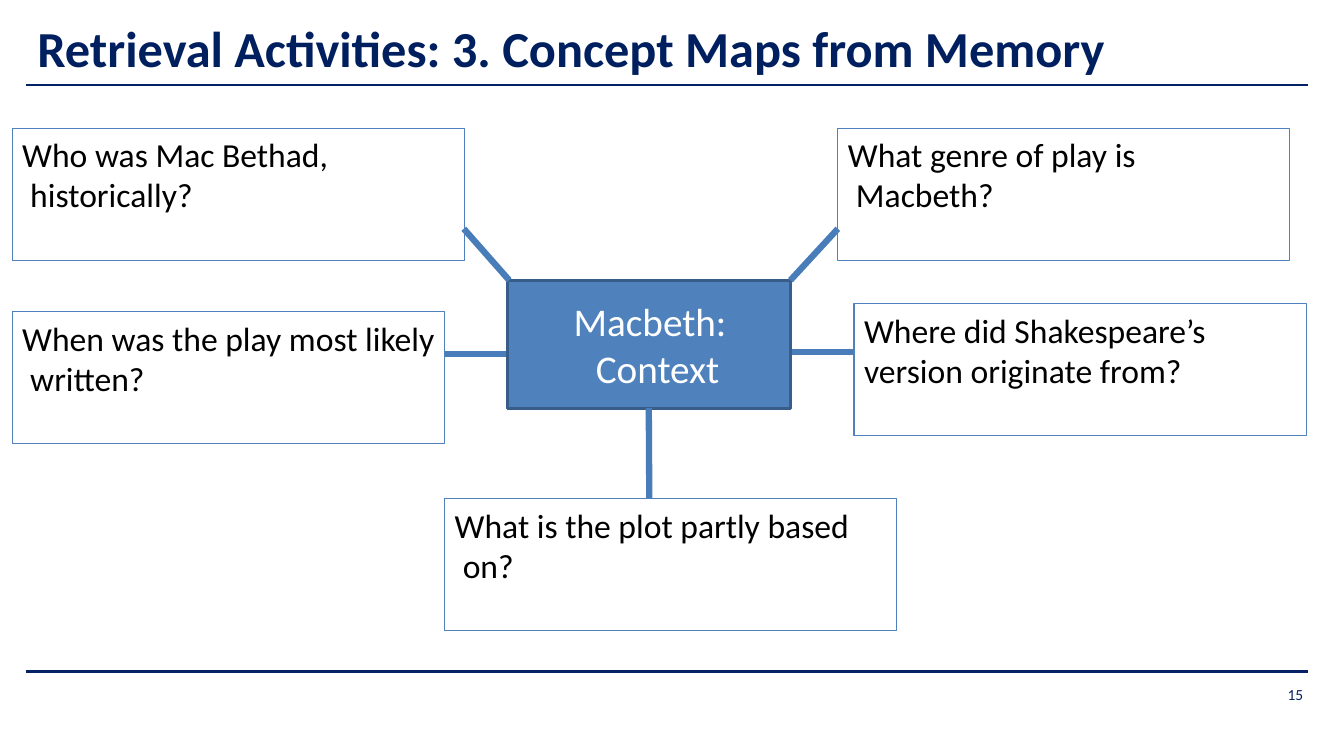
from pptx import Presentation
from pptx.dml.color import RGBColor
from pptx.enum.shapes import MSO_CONNECTOR, MSO_SHAPE
from pptx.enum.text import MSO_ANCHOR, MSO_AUTO_SIZE, PP_ALIGN
from pptx.oxml.ns import qn
from pptx.util import Inches, Pt
from lxml.etree import SubElement

COLOURS = {
    "title": "001F5F",
    "rule": "042163",
    "hub": "4F81BC",
    "hub_border": "385D89",
    "link": "497DBA",
    "text": "000000",
    "hub_text": "FFFFFF",
}


class ConceptMap:
    font_name = "Calibri"

    def __init__(self, presentation):
        self.slide = presentation.slides.add_slide(presentation.slide_layouts[5])

    def colour(self, name):
        return RGBColor.from_string(COLOURS[name])

    def add_text(self, shape, lines, size, colour, top=0, margin=0, hanging=0,
                 bold=False, anchor=MSO_ANCHOR.TOP):
        frame = shape.text_frame
        frame.word_wrap = True
        frame.auto_size = MSO_AUTO_SIZE.NONE
        frame.vertical_anchor = anchor
        frame.margin_left = frame.margin_right = frame.margin_bottom = 0
        frame.margin_top = Inches(top)
        paragraph = frame.paragraphs[0]
        paragraph.alignment = PP_ALIGN.LEFT
        properties = paragraph._p.get_or_add_pPr()
        properties.set("marL", str(Inches(margin + hanging)))
        properties.set("indent", str(-Inches(hanging)))
        for index, line in enumerate(lines):
            if index:
                paragraph.add_line_break()
            run = paragraph.add_run()
            run.text = line
            run.font.name = self.font_name
            run.font.size = Pt(size)
            run.font.bold = bold
            run.font.color.rgb = self.colour(colour)

    def title(self, text):
        shape = self.slide.shapes.title
        shape.left, shape.top = Inches(0.36), Inches(0.14)
        shape.width, shape.height = Inches(12), Inches(0.63)
        self.add_text(shape, [text], 36, "title", top=0.03, margin=0.01, bold=True)

    def line(self, start, end, colour, width):
        points = [Inches(value) for value in (*start, *end)]
        connector = self.slide.shapes.add_connector(MSO_CONNECTOR.STRAIGHT, *points)
        connector.line.color.rgb = self.colour(colour)
        connector.line.width = Pt(width)
        SubElement(connector._element.spPr, qn("a:effectLst"))
        return connector

    def rectangle(self, left, top, width, height, border, border_width, fill=None):
        shape = self.slide.shapes.add_shape(
            MSO_SHAPE.RECTANGLE, Inches(left), Inches(top), Inches(width), Inches(height))
        shape.shadow.inherit = False
        if fill:
            shape.fill.solid()
            shape.fill.fore_color.rgb = self.colour(fill)
        else:
            shape.fill.background()
        shape.line.color.rgb = self.colour(border)
        shape.line.width = Pt(border_width)
        return shape

    def hub(self, lines):
        shape = self.rectangle(5.03, 2.78, 2.81, 1.27, "hub_border", 2, "hub")
        self.add_text(shape, lines, 28, "hub_text", margin=0.66, hanging=0.22,
                      anchor=MSO_ANCHOR.MIDDLE)
        return shape

    def question(self, left, top, width, hanging, lines):
        shape = self.rectangle(left, top, width, 1.31, "hub", 0.75)
        self.add_text(shape, lines, 24, "text", top=0.06, margin=0.1, hanging=hanging)

    def page_number(self, text):
        shape = self.slide.shapes.add_textbox(
            Inches(12.73), Inches(6.8), Inches(0.24), Inches(0.18))
        self.add_text(shape, [text], 11, "rule", margin=0.04)


def main():
    presentation = Presentation()
    presentation.slide_width = Inches(13.33)
    presentation.slide_height = Inches(7.5)

    concept_map = ConceptMap(presentation)
    for height, width in ((0.84, 1.5), (6.66, 1.75)):
        concept_map.line((0.26, height), (12.97, height), "rule", width)
    concept_map.title("Retrieval Activities: 3. Concept Maps from Memory")

    hub = concept_map.hub(["Macbeth:", "Context"])
    links = [
        ((7.84, 2.78), (8.31, 2.27)),
        ((5.02, 3.51), (4.41, 3.51)),
        ((7.86, 3.49), (8.47, 3.49)),
        ((5.05, 2.78), (4.6, 2.27)),
    ]
    for start, end in links:
        concept_map.line(start, end, "link", 4.5)
    plot_link = concept_map.line((6.44, 4.05), (6.44, 4.95), "link", 4.5)
    plot_link.begin_connect(hub, 2)

    questions = [
        (8.31, 1.27, 4.48, 0.08, ["What genre of play is", "Macbeth?"]),
        (4.41, 4.95, 4.48, 0.08, ["What is the plot partly based", "on?"]),
        (8.47, 3.01, 4.49, 0, ["Where did Shakespeare’s", "version originate from?"]),
        (0.12, 1.27, 4.49, 0.08, ["Who was Mac Bethad,", "historically?"]),
        (0.12, 3.09, 4.29, 0.08, ["When was the play most likely", "written?"]),
    ]
    for question in questions:
        concept_map.question(*question)

    concept_map.page_number("15")
    presentation.save("out.pptx")


if __name__ == "__main__":
    main()
